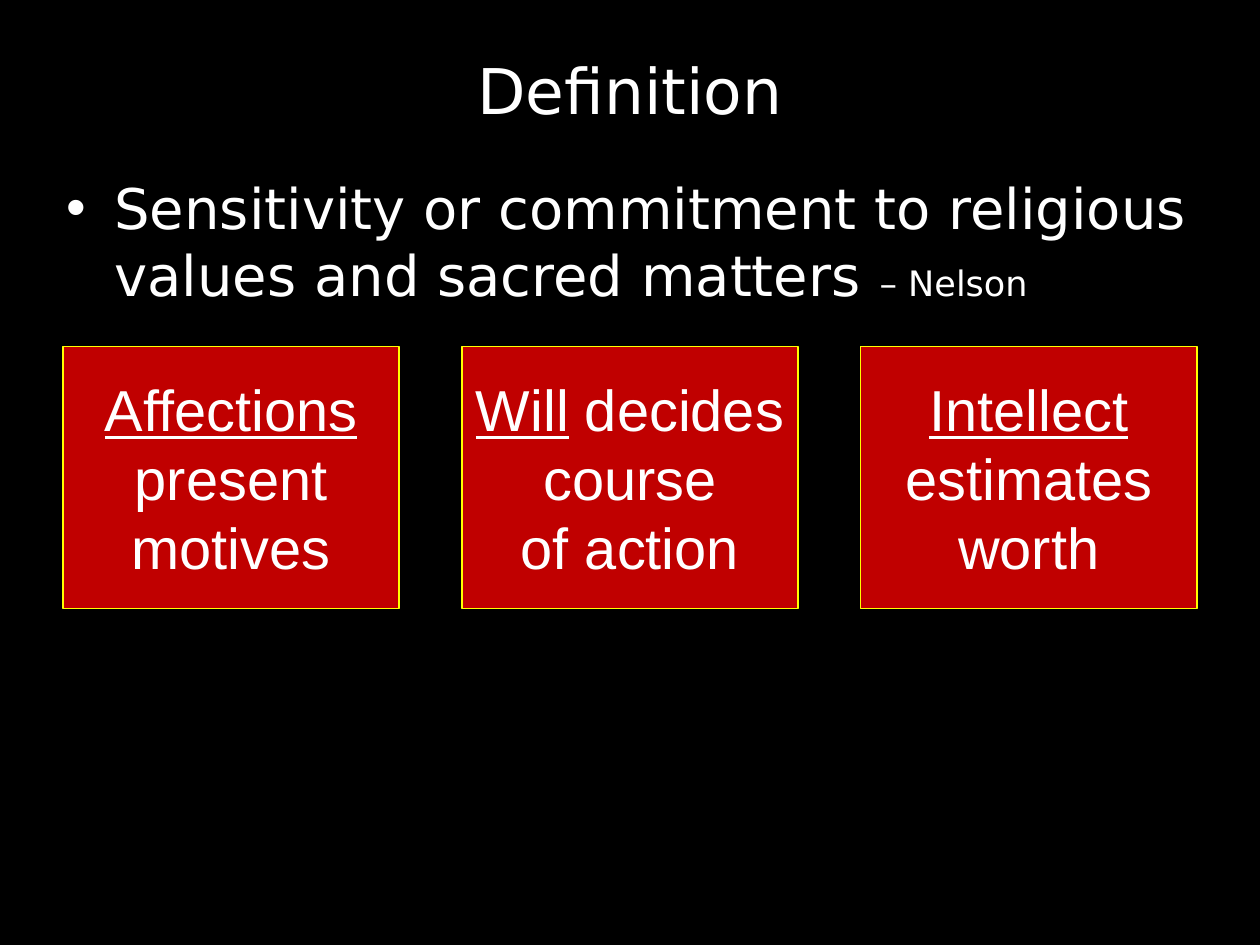
from lxml.etree import SubElement
from pptx import Presentation
from pptx.dml.color import RGBColor
from pptx.enum.shapes import MSO_SHAPE
from pptx.enum.text import MSO_ANCHOR, PP_ALIGN
from pptx.oxml.ns import qn
from pptx.util import Inches, Pt

COLORS = {"background": "000000", "text": "FFFFFF", "card": "C00000", "border": "FFFF00"}


class SlideBuilder:
    heading_font = "DejaVu Sans"
    card_font = "Arial"

    def __init__(self, deck):
        self.slide = deck.slides.add_slide(deck.slide_layouts[6])
        fill = self.slide.background.fill
        fill.solid()
        fill.fore_color.rgb = self.color("background")

    def color(self, name):
        return RGBColor.from_string(COLORS[name])

    def add_span(self, para, text, font, size, underline=False):
        span = para.add_run()
        span.text = text
        span.font.name = font
        span.font.size = Pt(size)
        span.font.underline = underline
        span.font.color.rgb = self.color("text")

    def text_box(self, left, top, width, height, anchor):
        box = self.slide.shapes.add_textbox(
            Inches(left), Inches(top), Inches(width), Inches(height))
        box.text_frame.word_wrap = True
        box.text_frame.vertical_anchor = anchor
        return box.text_frame.paragraphs[0]

    def title(self, text):
        para = self.text_box(0.5, 0.08, 9, 1.25, MSO_ANCHOR.MIDDLE)
        para.alignment = PP_ALIGN.CENTER
        self.add_span(para, text, self.heading_font, 36)

    def bullet(self, text, source):
        para = self.text_box(0.43, 1.33, 9.17, 5.5, MSO_ANCHOR.TOP)
        para.space_before = Pt(3.6)
        para.space_after = Pt(6)
        properties = para._p.get_or_add_pPr()
        properties.set("marL", str(Inches(0.38)))
        properties.set("indent", str(Inches(-0.38)))
        SubElement(properties, qn("a:buFont"), typeface="Arial")
        SubElement(properties, qn("a:buChar"), char="•")
        self.add_span(para, text, self.heading_font, 32)
        self.add_span(para, source, self.heading_font, 20)

    def card(self, left, top, width, height, faculty, lines):
        box = self.slide.shapes.add_shape(
            MSO_SHAPE.RECTANGLE, Inches(left), Inches(top), Inches(width), Inches(height))
        box.shadow.inherit = False
        box.fill.solid()
        box.fill.fore_color.rgb = self.color("card")
        box.line.color.rgb = self.color("border")
        box.line.width = Pt(1)
        frame = box.text_frame
        frame.word_wrap = True
        frame.vertical_anchor = MSO_ANCHOR.MIDDLE
        para = frame.paragraphs[0]
        para.alignment = PP_ALIGN.CENTER
        self.add_span(para, faculty, self.card_font, 33, underline=True)
        for index, line in enumerate(lines):
            if index:
                para.add_line_break()
            self.add_span(para, line, self.card_font, 33)


def main():
    deck = Presentation()
    deck.slide_width = Inches(10)
    deck.slide_height = Inches(7.5)
    builder = SlideBuilder(deck)
    builder.title("Definition")
    builder.bullet("Sensitivity or commitment to religious values and sacred matters ", "– Nelson")

    cards = [
        ("Affections", [" present motives"]),
        ("Will", [" decides course", "of action"]),
        ("Intellect", [" estimates worth"]),
    ]
    margin, width = 0.5, 2.67
    step = (10 - 2 * margin - width) / (len(cards) - 1)
    for index, (faculty, lines) in enumerate(cards):
        builder.card(margin + index * step, 2.75, width, 2.08, faculty, lines)
    deck.save("out.pptx")


if __name__ == "__main__":
    main()
